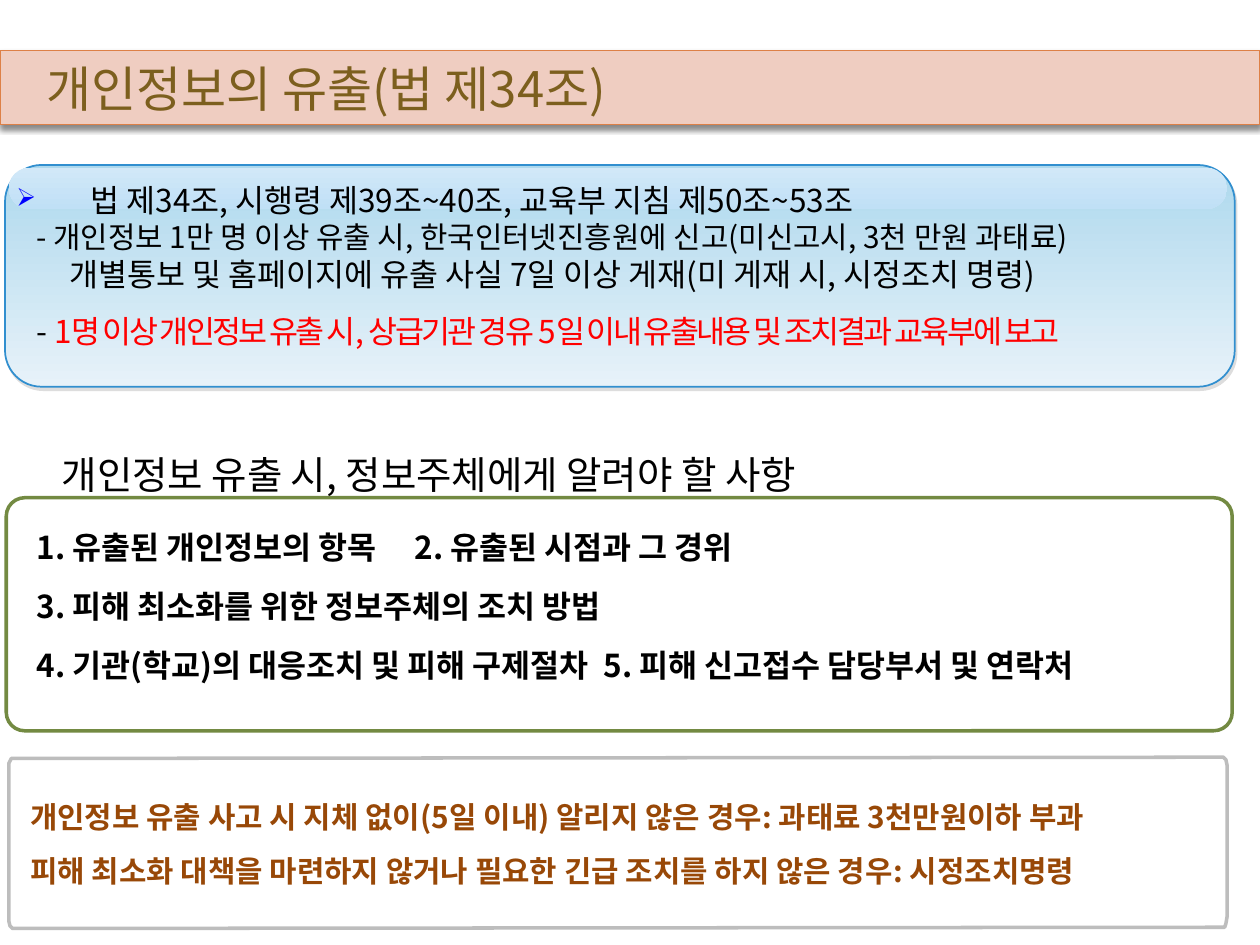
from pptx import Presentation
from pptx.dml.color import RGBColor
from pptx.enum.shapes import MSO_SHAPE as Kind
from pptx.enum.text import MSO_ANCHOR as Anchor, PP_ALIGN as Align
from pptx.oxml import parse_xml
from pptx.oxml.ns import nsdecls, qn
from pptx.util import Inches, Pt
from lxml.etree import SubElement as Sub


def tint(code):
    return RGBColor.from_string(code)


class Page:
    font = "Noto Sans CJK KR"
    ink = "000000"

    def __init__(self, deck):
        self.slide = deck.slides.add_slide(deck.slide_layouts[6])

    def paint(self, shape, fill, line, width):
        shape.shadow.inherit = False
        if isinstance(fill, tuple):
            shape.fill.gradient()
            shape.fill.gradient_angle = 270
            for stop, code in zip(shape.fill.gradient_stops, fill):
                stop.color.rgb = tint(code)
        elif fill:
            shape.fill.solid()
            shape.fill.fore_color.rgb = tint(fill)
        else:
            shape.fill.background()
        if line:
            shape.line.color.rgb = tint(line)
            shape.line.width = Pt(width)
        else:
            shape.line.fill.background()

    def box(self, area, fill, line=None, width=1, curve=None):
        kind = Kind.RECTANGLE if curve is None else Kind.ROUNDED_RECTANGLE
        shape = self.slide.shapes.add_shape(kind, *map(Inches, area))
        if curve is not None:
            shape.adjustments[0] = curve
        self.paint(shape, fill, line, width)
        return shape

    def shade(self, shape, code, alpha, blur, dist, angle):
        effect = shape._element.spPr.find(qn("a:effectLst"))
        effect.append(parse_xml(
            f'<a:outerShdw {nsdecls("a")} blurRad="{Pt(blur)}" dist="{Pt(dist)}" '
            f'dir="{angle * 60000}" algn="ctr" rotWithShape="0">'
            f'<a:srgbClr val="{code}"><a:alpha val="{alpha * 1000}"/></a:srgbClr>'
            f'</a:outerShdw>'))

    def frame(self, points, line, width):
        start, *rest = points
        form = self.slide.shapes.build_freeform(
            Inches(start[0]), Inches(start[1]))
        form.add_line_segments([(Inches(x), Inches(y)) for x, y in rest])
        self.paint(form.convert_to_shape(), None, line, width)

    def text(self, area, inset):
        body = self.slide.shapes.add_textbox(*map(Inches, area)).text_frame
        self.pad(body, inset)
        return body

    def pad(self, body, inset):
        body.word_wrap = True
        body.margin_left, body.margin_top = map(Inches, inset)
        body.margin_right, body.margin_bottom = map(Inches, inset)

    def para(self, body, left=0, hang=0, space=None, before=0, after=0,
             align=Align.LEFT):
        last = body.paragraphs[-1]
        para = body.add_paragraph() if last.runs else last
        para.alignment = align
        para.space_before, para.space_after = Pt(before), Pt(after)
        if space:
            para.line_spacing = space
        props = para._p.get_or_add_pPr()
        props.set("marL", str(Inches(left)))
        props.set("indent", str(Inches(-hang)))
        return para

    def run(self, para, words, size, code=ink, bold=False, track=0):
        run = para.add_run()
        run.text = words
        font = run.font
        font.name, font.size, font.bold = self.font, Pt(size), bold
        font.color.rgb = tint(code)
        props = run._r.get_or_add_rPr()
        Sub(props, qn("a:ea")).set("typeface", self.font)
        if track:
            props.set("spc", str(int(track * 100)))

    def mark(self, para, sign, code, scale):
        props = para._p.get_or_add_pPr()
        Sub(Sub(props, qn("a:buClr")), qn("a:srgbClr")).set("val", code)
        Sub(props, qn("a:buSzPct")).set("val", str(scale * 1000))
        Sub(props, qn("a:buChar")).set("char", sign)

    def tab(self, para, place):
        stops = Sub(para._p.get_or_add_pPr(), qn("a:tabLst"))
        stop = Sub(stops, qn("a:tab"))
        stop.set("pos", str(Inches(place)))
        stop.set("algn", "l")


def main():
    deck = Presentation()
    deck.slide_width, deck.slide_height = Inches(10), Inches(7.5)
    page = Page(deck)

    title = page.box((0, 0.4, 10, 0.59), "EFCDC1", "DD8047", 0.79)
    page.shade(title, "000000", 45, 3, 2.4, 90)
    body = title.text_frame
    page.pad(body, (0.1, 0.05))
    body.vertical_anchor = Anchor.MIDDLE
    page.run(page.para(body, 0.27), "개인정보의 유출(법 제34조)", 28, "7C5F1E")

    body = page.text((0.09, 3.35, 8.9, 1), (0.06, 0.05))
    page.run(page.para(body, 0.34, space=1.5, before=6.6),
             "개인정보 유출 시, 정보주체에게 알려야 할 사항", 22)

    panel = page.box((0.04, 1.31, 9.76, 1.76), ("ADD8ED", "E7F2F9"),
                     "318FCF", 1, 0.165)
    page.shade(panel, "DDDDDD", 100, 0, 2.2, 63)
    page.box((0.07, 1.33, 9.67, 0.33), ("D1E8F8", "C0E0F6"), curve=0.5)
    body = page.text((0.07, 1.39, 9.74, 1.46), (0.06, 0.05))
    law = page.para(body, 0.59, 0.59, before=5.4)
    page.mark(law, "➢", "0000FF", 80)
    page.run(law, "법 제34조, 시행령 제39조~40조, 교육부 지침 제50조~53조", 18)
    page.run(page.para(body, 0.16),
             "- 개인정보 1만 명 이상 유출 시, 한국인터넷진흥원에 신고"
             "(미신고시, 3천 만원 과태료)", 17)
    page.run(page.para(body, 0.42),
             "개별통보 및 홈페이지에 유출 사실 7일 이상 게재"
             "(미 게재 시, 시정조치 명령)", 18)
    duty = page.para(body, 0.16, space=1.5)
    page.run(duty, "- ", 18)
    page.run(duty, "1명 이상 개인정보 유출 시, 상급기관 경유 5일 이내 "
             "유출내용 및 조치결과 교육부에 보고", 18, "FF0000", track=-1.5)

    page.box((0.05, 3.95, 9.73, 1.85), "FFFFFF", "738A42", 2, 0.079)
    body = page.text((0.09, 4.14, 9.65, 1.39), (0.2, 0.05))
    items = [
        ("1. 유출된 개인정보의 항목\t2. 유출된 시점과 그 경위", 4.74),
        ("3. 피해 최소화를 위한 정보주체의 조치 방법", None),
        ("4. 기관(학교)의 대응조치 및 피해 구제절차\t"
         "5. 피해 신고접수 담당부서 및 연락처", 5.01),
    ]
    for words, place in items:
        item = page.para(body, before=6, after=6, align=Align.JUSTIFY)
        if place:
            page.tab(item, place)
        page.run(item, words, 18, bold=True)

    page.frame([(0.07, 6.12), (0.07, 6.06), (0.09, 6.02), (9.71, 6.01),
                (9.73, 6.03), (9.74, 6.08), (9.74, 7.27), (9.73, 7.33),
                (9.72, 7.36), (0.1, 7.37), (0.08, 7.35), (0.07, 7.31)],
               "BDBDBD", 2)
    body = page.text((0.14, 6.34, 9.59, 0.72), (0.1, 0))
    fines = [
        ("개인정보 유출 사고 시 지체 없이(5일 이내) 알리지 않은 경우: "
         "과태료 3천만원이하 부과", None),
        ("피해 최소화 대책을 마련하지 않거나 필요한 긴급 조치를 하지 않은 경우: "
         "시정조치명령", 1.5),
    ]
    for words, space in fines:
        page.run(page.para(body, space=space), words, 17, "984807", True)

    deck.save("out.pptx")


if __name__ == "__main__":
    main()
